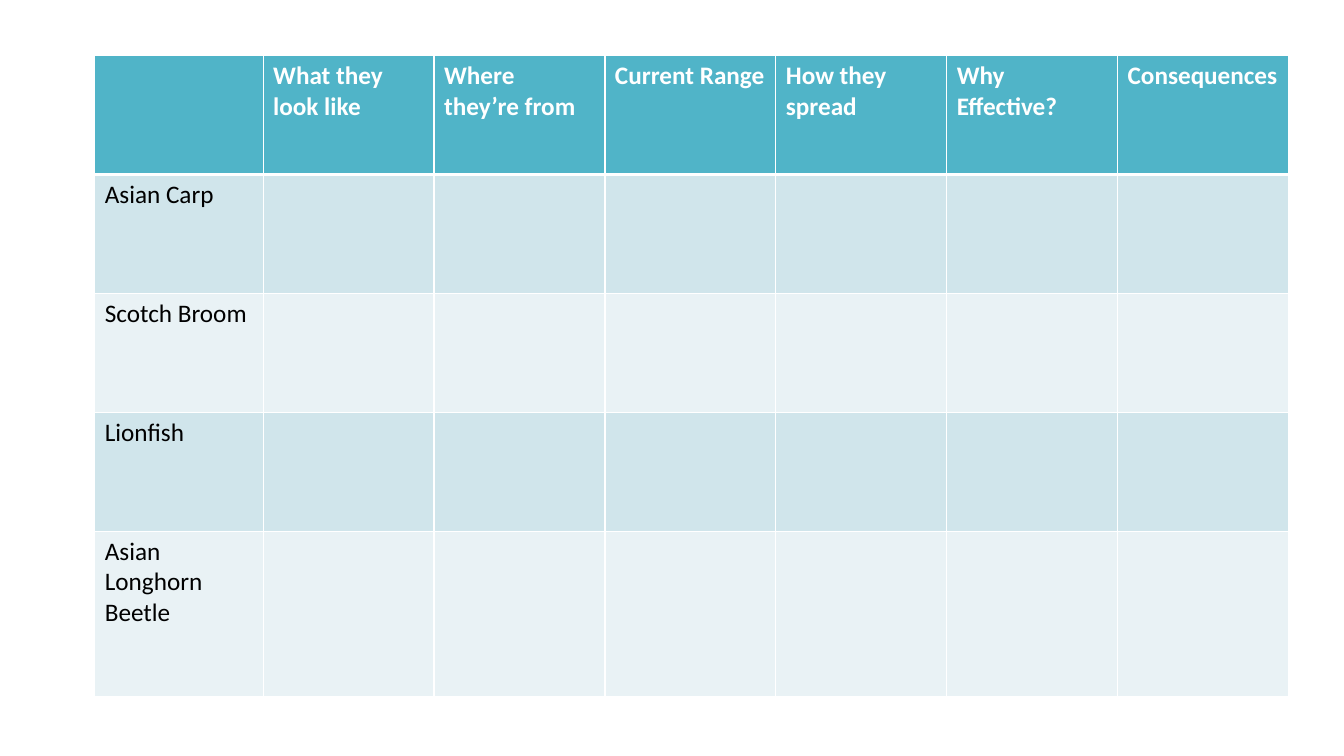
from pptx import Presentation
from pptx import util as u
from pptx.dml.color import RGBColor
from pptx.oxml import ns, xmlchemy

# Colours
HEADER_FILL = RGBColor(0x50, 0xB4, 0xC8)
BAND_FILLS = (RGBColor(0xD0, 0xE5, 0xEB), RGBColor(0xE9, 0xF2, 0xF5))
WHITE = RGBColor(0xFF, 0xFF, 0xFF)
BLACK = RGBColor(0x00, 0x00, 0x00)

# Grid, in inches
LEFT, TOP, WIDTH, HEIGHT = 0.94, 0.55, 11.84, 6.36
SPECIES_WIDTH = 1.67
ROW_HEIGHT = 1.18

# Wording; a line break in a name starts a new paragraph
QUESTIONS = ("What they look like", "Where they’re from", "Current Range",
             "How they spread", "Why Effective?", "Consequences")
SPECIES = ("Asian Carp", "Scotch Broom", "Lionfish", "Asian Longhorn\nBeetle")


def set_borders(cell, top=1, bottom=1):
    """Draw white lines round a cell, with widths in points."""
    properties = cell._tc.get_or_add_tcPr()
    widths = {"L": 1, "R": 1, "T": top, "B": bottom}
    for index, (side, width) in enumerate(widths.items()):
        line = xmlchemy.OxmlElement(f"a:ln{side}")
        line.set("w", str(u.Pt(width)))
        fill = xmlchemy.OxmlElement("a:solidFill")
        color = xmlchemy.OxmlElement("a:srgbClr")
        color.set("val", str(WHITE))
        fill.append(color)
        line.append(fill)
        properties.insert(index, line)


def format_cell(cell, fill, color, bold):
    cell.fill.solid()
    cell.fill.fore_color.rgb = fill
    for para in cell.text_frame.paragraphs:
        para.font.name = "Calibri"
        para.font.size = u.Pt(18)
        para.font.bold = bold
        para.font.color.rgb = color


def add_species_table(page):
    rows, columns = len(SPECIES) + 1, len(QUESTIONS) + 1
    table = page.shapes.add_table(
        rows, columns, *map(u.Inches, (LEFT, TOP, WIDTH, HEIGHT))).table

    # Column widths and row heights
    for column in table.columns:
        column.width = u.Inches((WIDTH - SPECIES_WIDTH) / len(QUESTIONS))
    table.columns[0].width = u.Inches(SPECIES_WIDTH)
    for row in table.rows:
        row.height = u.Inches(ROW_HEIGHT)
    table.rows[rows - 1].height = u.Inches(HEIGHT - ROW_HEIGHT * len(SPECIES))

    # Headings
    for index, question in enumerate(QUESTIONS, 1):
        table.cell(0, index).text = question
    for index, species in enumerate(SPECIES, 1):
        table.cell(index, 0).text = species

    # Fills, fonts and lines, with a thick line below the header
    for index, row in enumerate(table.rows):
        for cell in row.cells:
            if index == 0:
                format_cell(cell, HEADER_FILL, WHITE, True)
                set_borders(cell, bottom=3)
            else:
                format_cell(cell, BAND_FILLS[(index - 1) % 2], BLACK, False)
                set_borders(cell, top=3 if index == 1 else 1)


def main():
    deck = Presentation()
    deck.slide_width, deck.slide_height = u.Inches(13.33), u.Inches(7.5)
    page = deck.slides.add_slide(deck.slide_layouts.get_by_name("Blank"))
    add_species_table(page)
    deck.save("out.pptx")


if __name__ == "__main__":
    main()
